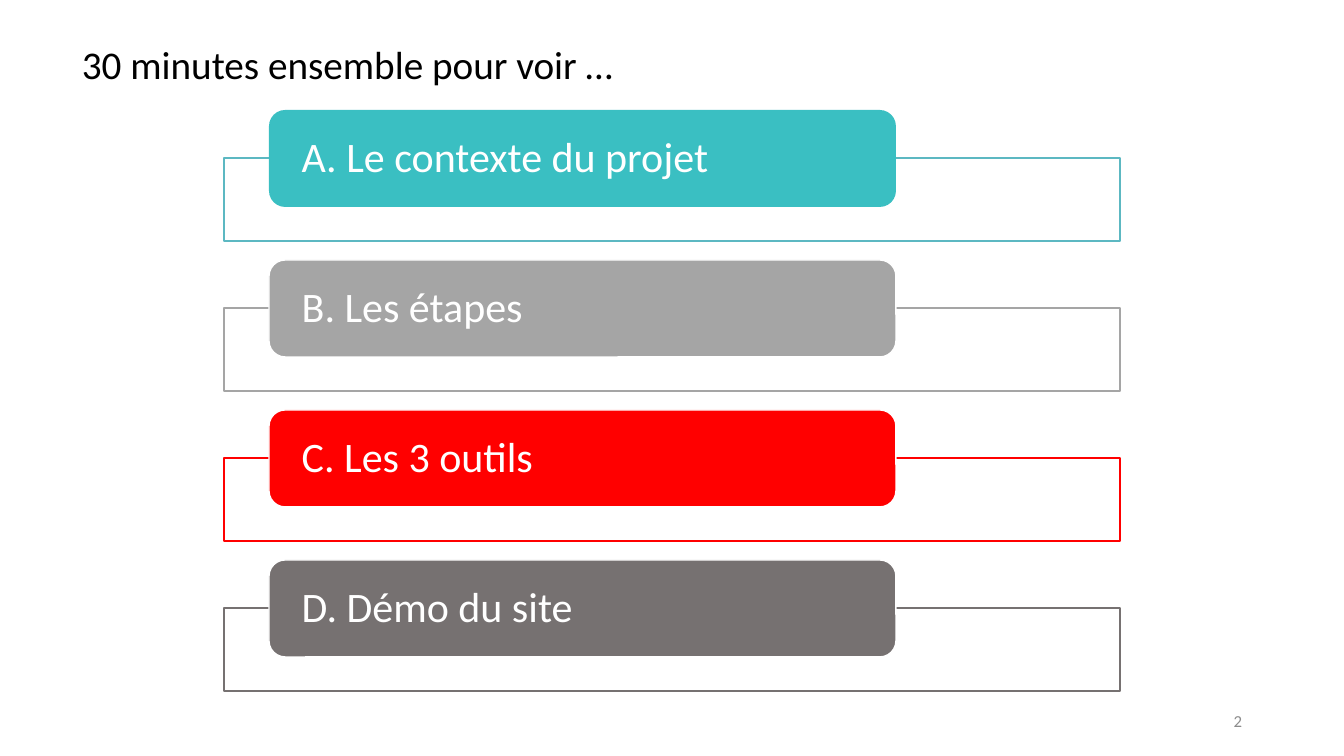
from pptx import Presentation
from pptx.dml.color import RGBColor
from pptx.enum.shapes import MSO_SHAPE
from pptx.enum.text import MSO_ANCHOR, PP_ALIGN
from pptx.util import Pt

# Content
TITLE = "30 minutes ensemble pour voir …"
PAGE = "2"
COLORS = {
    "white": "FFFFFF", "black": "000000", "page": "8C8C8C",
    "teal": "3ABFC2", "teal_line": "5CB8C2", "gray": "A5A5A5",
    "red": "FF0000", "dark": "767171",
}
# Label, tab fill, tab outline, frame outline
AGENDA = [
    ("A. Le contexte du projet", "teal", None, "teal_line"),
    ("B. Les étapes", "gray", "white", "gray"),
    ("C. Les 3 outils", "red", "white", "red"),
    ("D. Démo du site", "dark", "white", "dark"),
]

# Layout in px
SLIDE_W, SLIDE_H = 1344, 756
TITLE_BOX = (72, 41, 1159, 480)
PAGE_BOX = (950, 701, 302, 40)
TAB_X, TAB_Y, TAB_W, TAB_H = 269, 110, 627, 97
FRAME_X, FRAME_W, FRAME_H = 224, 896, 83
FRAME_DROP = 48
PITCH = 150
TAB_INSET = 28


def px(n):
    return round(n * 914400 / 100.8)


def color(name):
    return RGBColor.from_string(COLORS[name])


def write(sp, text, size, fill, align=PP_ALIGN.LEFT, anchor=MSO_ANCHOR.MIDDLE,
          spacing=None, inset=None):
    tf = sp.text_frame
    tf.word_wrap = True
    tf.vertical_anchor = anchor
    if inset is not None:
        tf.margin_left = tf.margin_right = px(inset)
        tf.margin_top = tf.margin_bottom = 0
    p = tf.paragraphs[0]
    p.alignment = align
    p.line_spacing = spacing
    r = p.add_run()
    r.text = text
    r.font.name = "Calibri"
    r.font.size = Pt(size)
    r.font.color.rgb = color(fill)


def add_box(s, kind, box, fill, line):
    sp = s.shapes.add_shape(kind, *map(px, box))
    sp.shadow.inherit = False
    sp.fill.solid()
    sp.fill.fore_color.rgb = color(fill)
    if line:
        sp.line.color.rgb = color(line)
        sp.line.width = Pt(1)
    else:
        sp.line.fill.background()
    return sp


prs = Presentation()
prs.slide_width, prs.slide_height = px(SLIDE_W), px(SLIDE_H)
s = prs.slides.add_slide(prs.slide_layouts[6])

# Title
write(s.shapes.add_textbox(*map(px, TITLE_BOX)), TITLE, 28, "black",
      anchor=MSO_ANCHOR.TOP, spacing=0.9)

# Agenda: a frame with a tab over its top edge
for i, (label, fill, outline, frame_line) in enumerate(AGENDA):
    y = TAB_Y + i * PITCH
    add_box(s, MSO_SHAPE.RECTANGLE,
            (FRAME_X, y + FRAME_DROP, FRAME_W, FRAME_H), "white", frame_line)
    tab = add_box(s, MSO_SHAPE.ROUNDED_RECTANGLE,
                  (TAB_X, y, TAB_W, TAB_H), fill, outline)
    write(tab, label, 30, "white", spacing=0.9, inset=TAB_INSET)

# Page number
write(s.shapes.add_textbox(*map(px, PAGE_BOX)), PAGE, 12, "page",
      align=PP_ALIGN.RIGHT)

prs.save("out.pptx")
